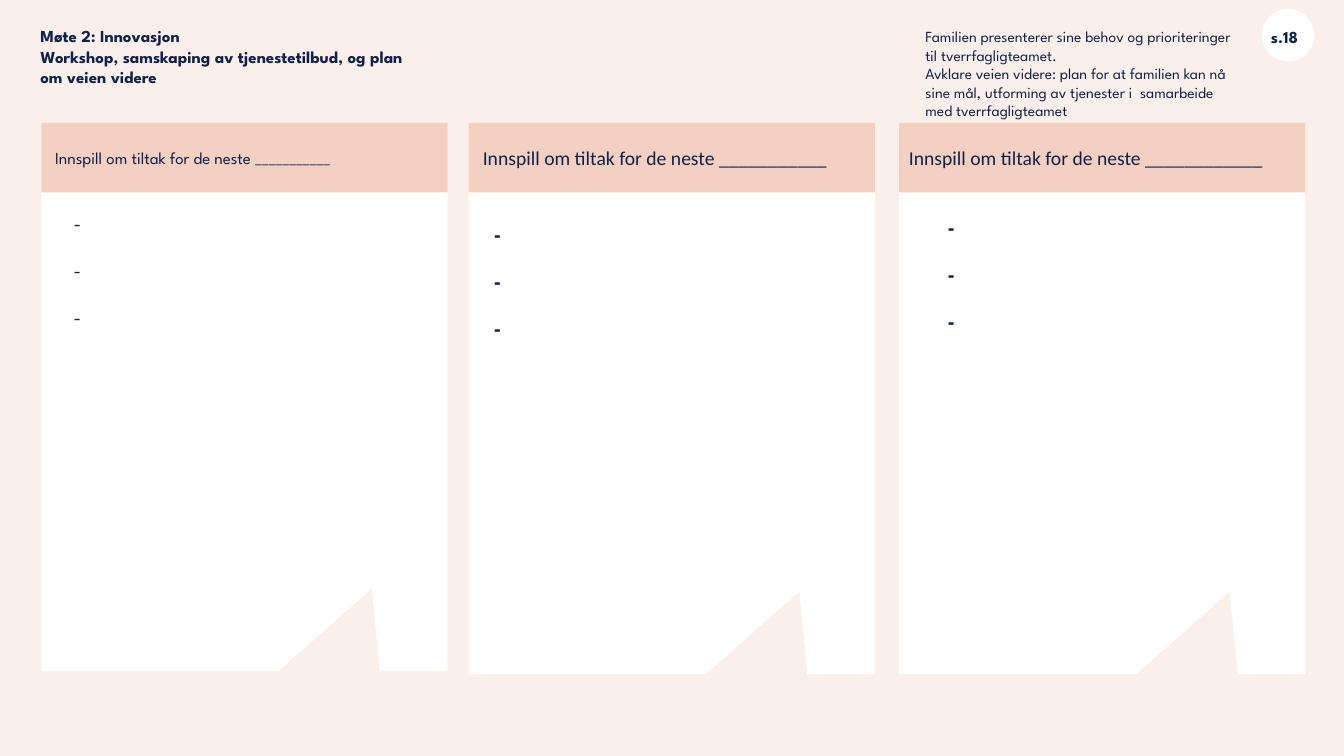
from pptx import Presentation
from pptx.dml.color import RGBColor
from pptx.enum.shapes import MSO_SHAPE as SHAPE
from pptx.enum.text import MSO_ANCHOR as ANCHOR, MSO_AUTO_SIZE as FIT, PP_ALIGN as ALIGN
from pptx.oxml.ns import qn
from pptx.util import Pt

CREAM = RGBColor(0xFB, 0xEF, 0xEA)
PEACH = RGBColor(0xF3, 0xD0, 0xC1)
WHITE = RGBColor(0xFF, 0xFF, 0xFF)
NAVY = RGBColor(0x0E, 0x22, 0x4E)
INK = RGBColor(0x0E, 0x22, 0x4C)

SPARTAN = "League Spartan"
CARD_W, CARD_H = 290.2, 391.7
HEAD_TOP, HEAD_H = 87.8, 49.7
PROMPT = "Innspill om tiltak for de neste "

COLUMNS = [
    dict(left=29.5, top=87.8, blanks=11, inset=9.8,
         head=dict(size=12, name=SPARTAN, color=NAVY),
         box=(45.4, 146.9, 243.4, 126.7), bold=False, align=ALIGN.LEFT),
    dict(left=334.8, top=90, blanks=11, inset=10.1,
         head=dict(size=14, name="Calibri", color=INK),
         box=(345.6, 154.8, 259.9, 92.2), bold=True, align=ALIGN.JUSTIFY),
    dict(left=642.2, top=90, blanks=12, inset=7.2,
         head=dict(size=14, name="Calibri", color=INK),
         box=(669.6, 149.8, 243.4, 92.2), bold=True, align=ALIGN.LEFT),
]


def set_attrs(obj, values):
    for name, value in values.items():
        setattr(obj, name, value)


def write(sp, lines, size, color, name=SPARTAN, bold=False,
          align=ALIGN.LEFT, anchor=ANCHOR.TOP, inset=7.2, gap=0):
    tf = sp.text_frame
    set_attrs(tf, dict(word_wrap=True, auto_size=FIT.NONE, vertical_anchor=anchor,
                       margin_left=Pt(inset), margin_right=Pt(7.2),
                       margin_top=Pt(3.6), margin_bottom=Pt(3.6)))
    for i, line in enumerate(lines):
        p = tf.add_paragraph() if i else tf.paragraphs[0]
        set_attrs(p, dict(alignment=align, space_before=Pt(gap if i else 0),
                          space_after=Pt(0)))
        r = p.add_run()
        r.text = line
        set_attrs(r.font, dict(size=Pt(size), name=name, bold=bold))
        r.font.color.rgb = color


def add_panel(s, kind, box, color):
    sp = s.shapes.add_shape(kind, *map(Pt, box))
    sp.shadow.inherit = False
    sp.fill.solid()
    sp.fill.fore_color.rgb = color
    sp.line.fill.background()
    return sp


def fill_placeholder(s, idx, box, lines, **fmt):
    sp = s.placeholders[idx]
    set_attrs(sp, dict(zip(("left", "top", "width", "height"), map(Pt, box))))
    write(sp, lines, **fmt)
    for p in sp.text_frame.paragraphs:
        pPr = p._p.get_or_add_pPr()
        pPr.set("marL", "0")
        pPr.set("indent", "0")
        pPr.append(pPr.makeelement(qn("a:buNone"), {}))
    s.shapes._spTree.append(sp._element)


def add_column(s, idx, col):
    card = add_panel(s, SHAPE.RECTANGULAR_CALLOUT,
                     (col["left"], col["top"], CARD_W, CARD_H), WHITE)
    card.adjustments[0] = 0.314
    card.adjustments[1] = 0.349
    head = add_panel(s, SHAPE.RECTANGLE,
                     (col["left"], HEAD_TOP, CARD_W, HEAD_H), PEACH)
    write(head, [PROMPT + "_" * col["blanks"]], anchor=ANCHOR.MIDDLE,
          inset=col["inset"], **col["head"])
    fill_placeholder(s, idx, col["box"], ["-"] * 3, size=14, color=NAVY,
                     bold=col["bold"], align=col["align"], gap=16.8)


def add_badge(s, text):
    add_panel(s, SHAPE.OVAL, (901.4, 6.5, 37.4, 37.4), WHITE)
    label = s.shapes.add_textbox(*map(Pt, (900.7, 15.8, 55, 21.6)))
    write(label, [text], size=12, color=INK, bold=True)


def main():
    prs = Presentation()
    set_attrs(prs, dict(slide_width=Pt(960), slide_height=Pt(540)))
    s = prs.slides.add_slide(prs.slide_layouts.get_by_name("Comparison"))
    s.background.fill.solid()
    s.background.fill.fore_color.rgb = CREAM

    fill_placeholder(s, 0, (21.6, 15.1, 290.2, 65.5), [
        "Møte 2: Innovasjon",
        "Workshop, samskaping av tjenestetilbud, og plan om veien videre",
    ], size=12, color=NAVY, bold=True)
    for idx, col in enumerate(COLUMNS, 1):
        add_column(s, idx, col)
    add_badge(s, "s.18")
    fill_placeholder(s, 4, (653.8, 15.8, 241.9, 74.2), [
        "Familien presenterer sine behov og prioriteringer til tverrfagligteamet.",
        "Avklare veien videre: plan for at familien kan nå sine mål, "
        "utforming av tjenester i  samarbeide med tverrfagligteamet",
    ], size=11, color=INK)
    prs.save("out.pptx")


if __name__ == "__main__":
    main()
